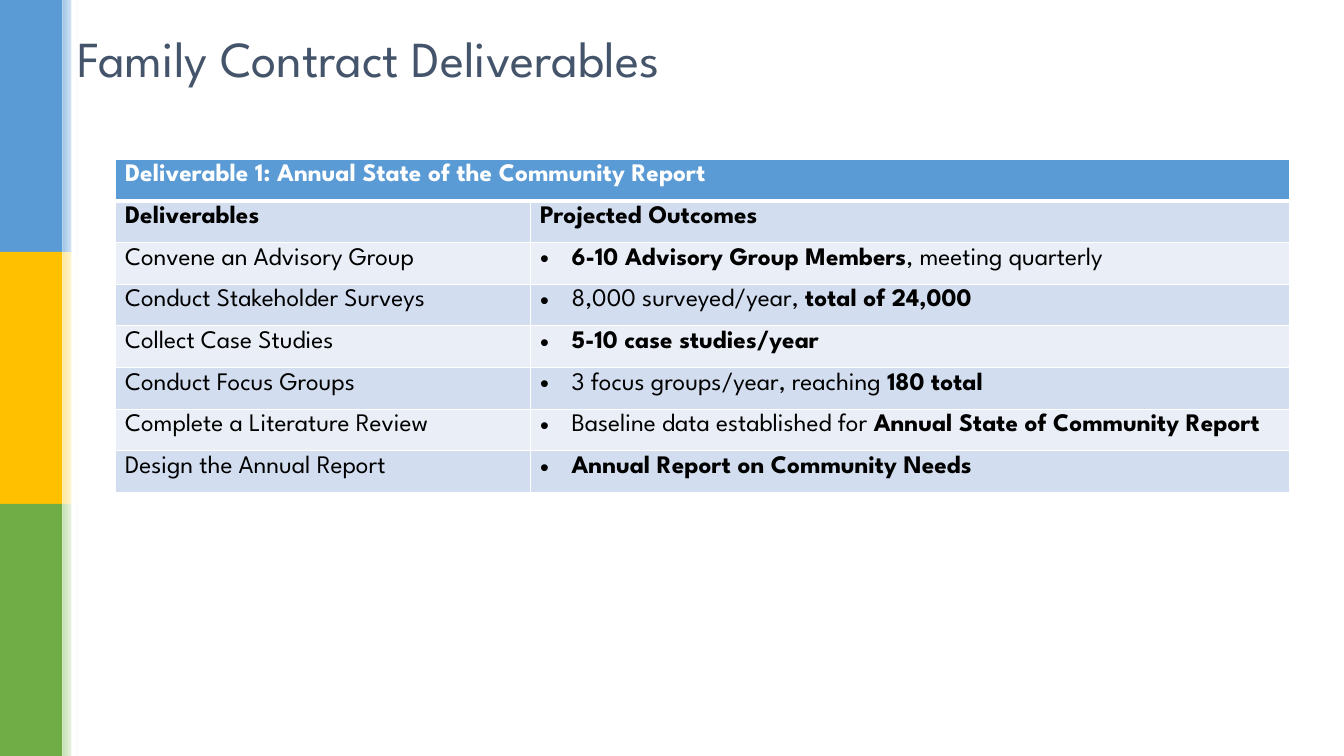
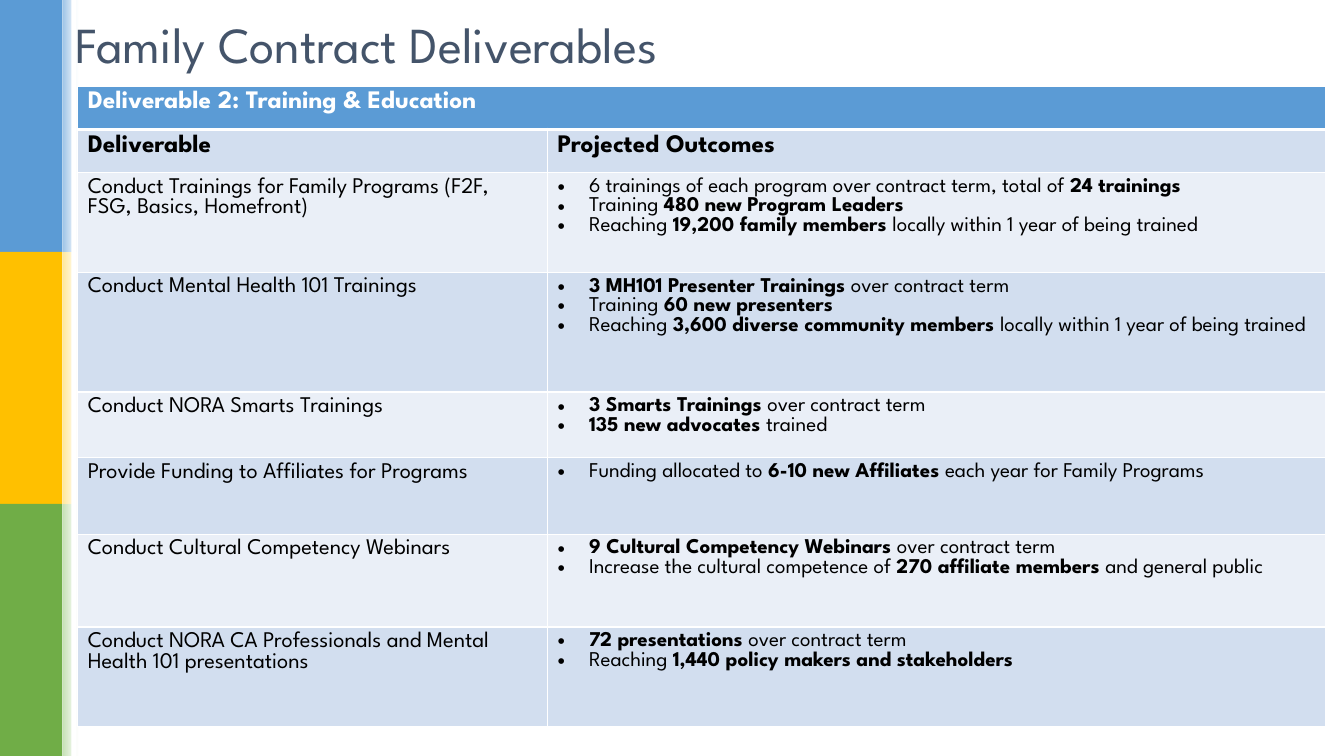
import lxml.etree
import pptx
import pptx.dml.color
import pptx.enum.shapes
import pptx.enum.text
import pptx.oxml.ns
import pptx.util

Cm, Pt = pptx.util.Cm, pptx.util.Pt
RGBColor = pptx.dml.color.RGBColor
qn = pptx.oxml.ns.qn

# Shared look
FONT = "League Spartan"
WHITE = RGBColor(0xFF, 0xFF, 0xFF)
BLACK = RGBColor(0x00, 0x00, 0x00)
SLATE = RGBColor(0x44, 0x54, 0x6A)
BLUE = RGBColor(0x5B, 0x9B, 0xD5)
GOLD = RGBColor(0xFF, 0xC0, 0x00)
GREEN = RGBColor(0x70, 0xAD, 0x47)
PALE_BLUE = RGBColor(0x9D, 0xC3, 0xE6)
PALE_GOLD = RGBColor(0xFF, 0xE6, 0x99)
PALE_GREEN = RGBColor(0xC5, 0xE0, 0xB4)
ROW_DARK = RGBColor(0xD2, 0xDE, 0xEF)
ROW_LIGHT = RGBColor(0xEA, 0xEF, 0xF7)

SLIDE_WIDTH, SLIDE_HEIGHT = 33.87, 19.05
BANDS = [(BLUE, PALE_BLUE), (GOLD, PALE_GOLD), (GREEN, PALE_GREEN)]
BAND_WIDTH, FADE_WIDTH = 1.57, 0.41
BULLET_INDENT = 0.79
HEADING_SIZE = 18
TITLE = "Family Contract Deliverables"

# Content: lengths in centimetres, ** marks bold text
SLIDES = [
    {
        "title_at": (1.7, 0),
        "table_at": (2.9, 4.01),
        "columns": (10.46, 19.13),
        "rows": [1.05] * 8,
        "sizes": (18, 18),
        "heading": "Deliverable 1: Annual State of the Community Report",
        "labels": ("Deliverables", "Projected Outcomes"),
        "deliverables": [
            ("Convene an Advisory Group",
             ["**6-10 Advisory Group Members**, meeting quarterly"]),
            ("Conduct Stakeholder Surveys",
             ["8,000 surveyed/year, **total of 24,000**"]),
            ("Collect Case Studies", ["**5-10 case studies/year**"]),
            ("Conduct Focus Groups",
             ["3 focus groups/year, reaching **180 total**"]),
            ("Complete a Literature Review",
             ["Baseline data established for "
              "**Annual State of Community Report**"]),
            ("Design the Annual Report",
             ["**Annual Report on Community Needs**"]),
        ],
    },
    {
        "title_at": (1.65, -0.36),
        "table_at": (1.96, 2.17),
        "columns": (11.84, 19.61),
        "rows": [1.09, 1.09, 2.51, 3.02, 1.65, 1.93, 2.34, 2.51],
        "sizes": (16, 15),
        "heading": "Deliverable 2: Training & Education",
        "labels": ("Deliverable", "Projected Outcomes"),
        "deliverables": [
            ("Conduct Trainings for Family Programs "
             "(F2F, FSG, Basics, Homefront)",
             ["6 trainings of each program over contract term, "
              "total of **24 trainings**",
              "Training **480 new Program Leaders**",
              "Reaching **19,200 family members **"
              "locally within 1 year of being trained"]),
            ("Conduct Mental Health 101 Trainings",
             ["**3 MH101 Presenter Trainings **over contract term",
              "Training **60 new presenters**",
              "Reaching **3,600 diverse community members **"
              "locally within 1 year of being trained"]),
            ("Conduct NORA Smarts Trainings",
             ["**3 Smarts Trainings **over contract term",
              "**135 new advocates **trained"]),
            ("Provide Funding to Affiliates for Programs",
             ["Funding allocated to **6-10 new Affiliates **"
              "each year for Family Programs"]),
            ("Conduct Cultural Competency Webinars",
             ["**9 Cultural Competency Webinars **over contract term",
              "Increase the cultural competence of "
              "**270 affiliate members **and general public"]),
            ("Conduct NORA CA Professionals and Mental Health 101 "
             "presentations",
             ["**72 presentations **over contract term",
              "Reaching **1,440 policy makers and stakeholders**"]),
        ],
    },
]


def add_block(slide, left, top, width, height, color, fade_to=None):
    block = slide.shapes.add_shape(
        pptx.enum.shapes.MSO_SHAPE.RECTANGLE,
        Cm(left), Cm(top), Cm(width), Cm(height))
    block.shadow.inherit = False
    block.line.fill.background()
    if fade_to is None:
        block.fill.solid()
        block.fill.fore_color.rgb = color
    else:
        block.fill.gradient()
        block.fill.gradient_angle = 0
        for stop, stop_color in zip(block.fill.gradient_stops, (color, fade_to)):
            stop.color.rgb = stop_color


def add_side_bands(slide):
    height = SLIDE_HEIGHT / len(BANDS)
    for i, (color, pale) in enumerate(BANDS):
        add_block(slide, 0, i * height, BAND_WIDTH, height, color)
        add_block(slide, BAND_WIDTH, i * height, FADE_WIDTH, height, pale, WHITE)
    add_block(slide, 1.8, 0, 0.13, SLIDE_HEIGHT, WHITE)


def style(paragraph, size, color):
    paragraph.font.name = FONT
    paragraph.font.size = Pt(size)
    paragraph.font.color.rgb = color


def add_title(slide, left, top):
    frame = slide.shapes.add_textbox(
        Cm(left), Cm(top), Cm(29.21), Cm(2.9)).text_frame
    frame.word_wrap = True
    frame.vertical_anchor = pptx.enum.text.MSO_ANCHOR.MIDDLE
    frame.text = TITLE
    style(frame.paragraphs[0], 36, SLATE)


def add_bullet(paragraph):
    properties = paragraph._p.get_or_add_pPr()
    properties.set("marL", str(Cm(BULLET_INDENT)))
    properties.set("indent", str(-Cm(BULLET_INDENT)))
    lxml.etree.SubElement(properties, qn("a:buFont"), typeface="Arial")
    lxml.etree.SubElement(properties, qn("a:buChar"), char="•")


def set_borders(cell, top, bottom):
    properties = cell._tc.get_or_add_tcPr()
    for side, width in (("L", 1), ("R", 1), ("T", top), ("B", bottom)):
        line = lxml.etree.SubElement(
            properties, qn("a:ln" + side), w=str(Pt(width)))
        fill = lxml.etree.SubElement(line, qn("a:solidFill"))
        lxml.etree.SubElement(fill, qn("a:srgbClr"), val=str(WHITE))


def fill_cell(cell, lines, size, color=BLACK, bulleted=False):
    frame = cell.text_frame
    for i, line in enumerate(lines):
        paragraph = frame.add_paragraph() if i else frame.paragraphs[0]
        if bulleted:
            add_bullet(paragraph)
        style(paragraph, size, color)
        for j, part in enumerate(line.split("**")):
            if part:
                run = paragraph.add_run()
                run.text = part
                run.font.bold = j % 2 == 1


def add_deliverables(slide, content):
    left, top = content["table_at"]
    columns, rows = content["columns"], content["rows"]
    table = slide.shapes.add_table(
        len(rows), len(columns), Cm(left), Cm(top),
        Cm(sum(columns)), Cm(sum(rows))).table
    for column, width in zip(table.columns, columns):
        column.width = Cm(width)

    # Row heights, borders and alternating fills
    for i, (row, height) in enumerate(zip(table.rows, rows)):
        row.height = Cm(height)
        for cell in row.cells:
            set_borders(cell, 3 if i == 1 else 1, 3 if i == 0 else 1)
            cell.fill.solid()
            cell.fill.fore_color.rgb = (
                BLUE if i == 0 else ROW_DARK if i % 2 else ROW_LIGHT)

    # Heading across both columns, then labels, then deliverables
    table.cell(0, 0).merge(table.cell(0, 1))
    fill_cell(table.cell(0, 0), [f"**{content['heading']}**"],
              HEADING_SIZE, WHITE)
    for i, label in enumerate(content["labels"]):
        fill_cell(table.cell(1, i), [f"**{label}**"], HEADING_SIZE)
    name_size, outcome_size = content["sizes"]
    for i, (name, outcomes) in enumerate(content["deliverables"], start=2):
        fill_cell(table.cell(i, 0), [name], name_size)
        fill_cell(table.cell(i, 1), outcomes, outcome_size, bulleted=True)


def main():
    deck = pptx.Presentation()
    deck.slide_width, deck.slide_height = Cm(SLIDE_WIDTH), Cm(SLIDE_HEIGHT)
    for content in SLIDES:
        slide = deck.slides.add_slide(deck.slide_layouts[6])
        add_side_bands(slide)
        add_title(slide, *content["title_at"])
        add_deliverables(slide, content)
    deck.save("out.pptx")


if __name__ == "__main__":
    main()
